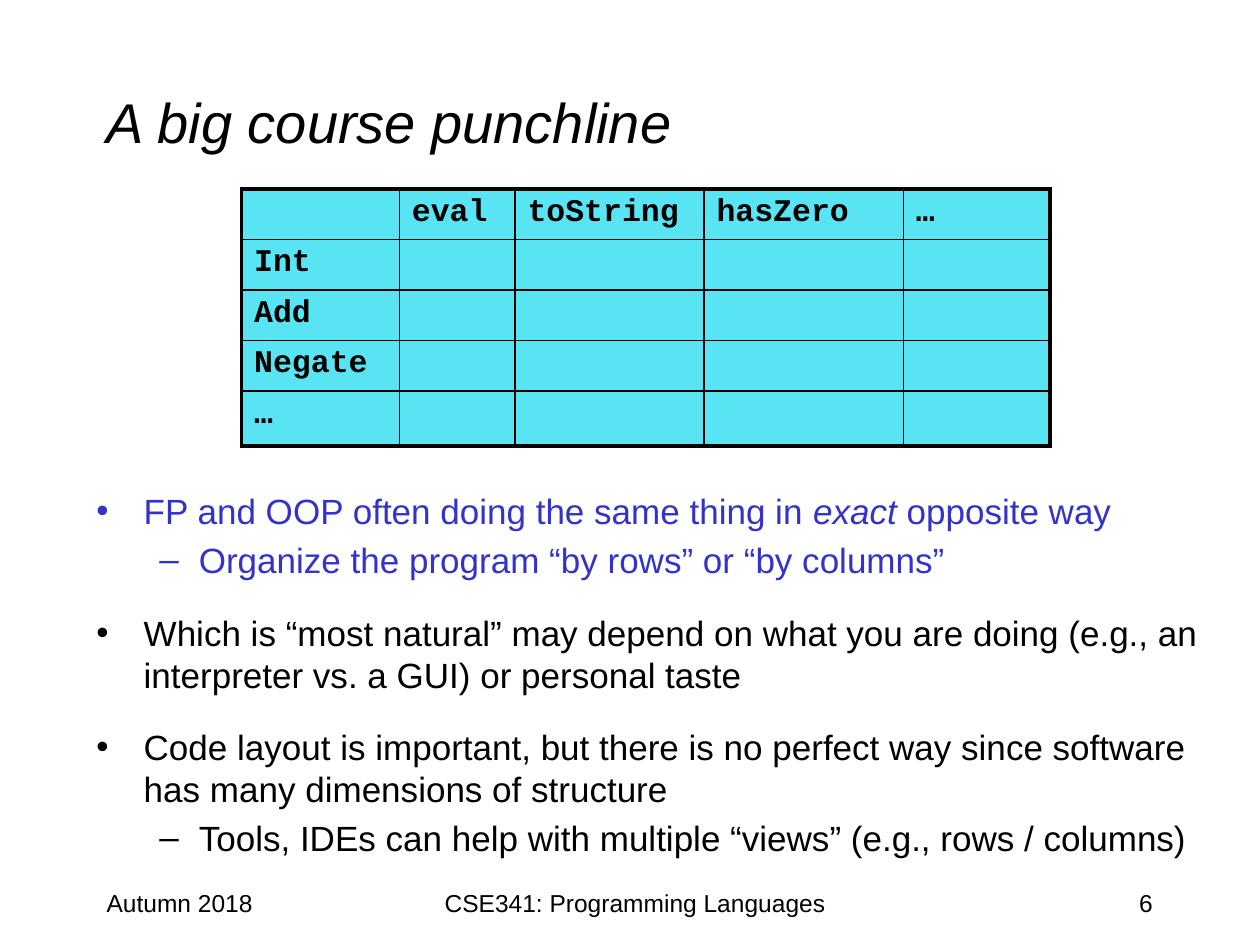
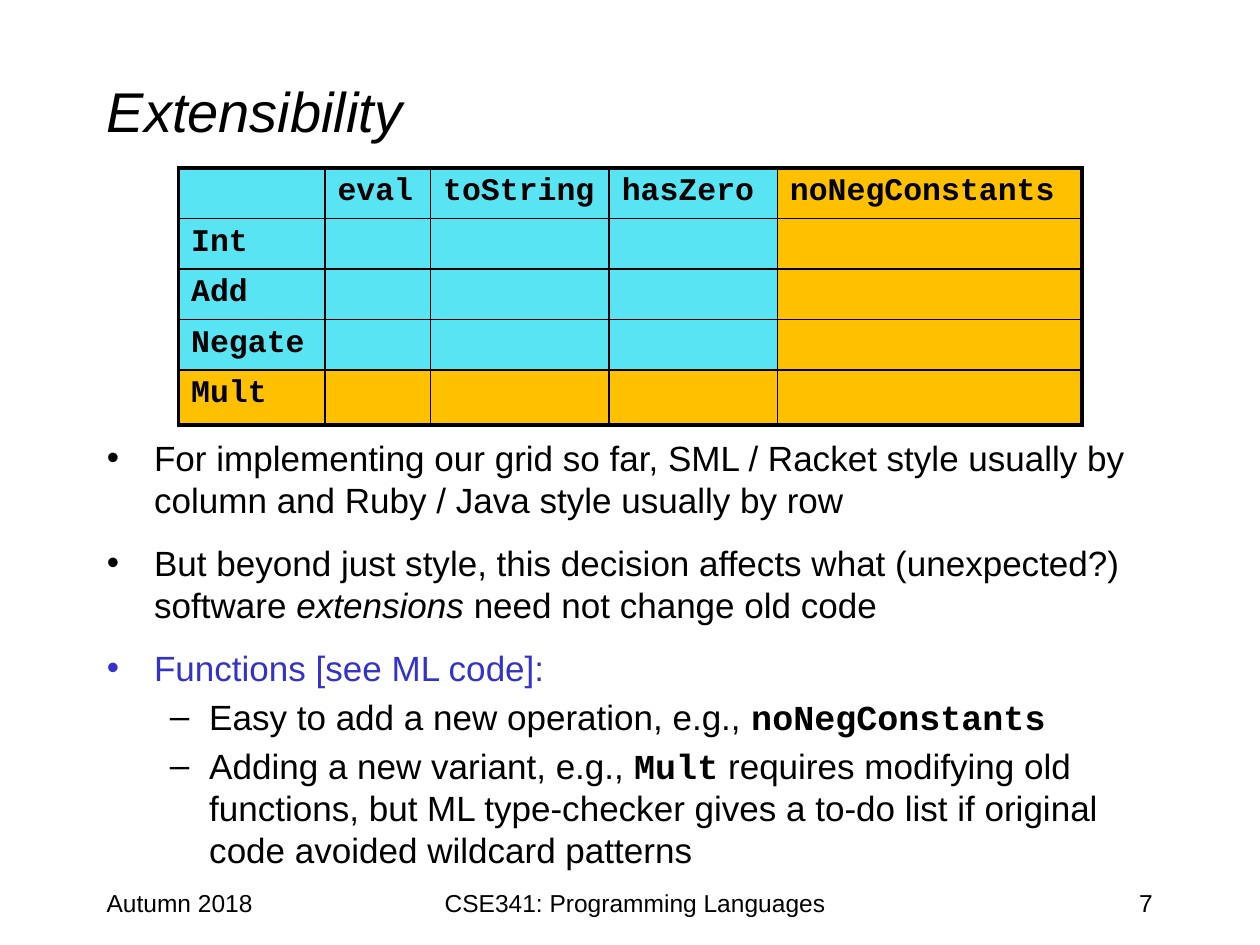
from lxml import etree
from pptx import Presentation
from pptx.dml.color import RGBColor
from pptx.enum.text import MSO_AUTO_SIZE as AutoSize, PP_ALIGN as Align
from pptx.oxml.ns import qn
from pptx.util import Cm, Pt

BLACK, BLUE = "000000", "3333CC"
CYAN, AMBER = "59E4F3", "FFC000"
SANS, MONO = "Arial", "Courier New"
CODE = {"font": MONO, "bold": True}
ITALIC = {"italic": True}
VARIANTS = ["Int", "Add", "Negate"]
OPERATIONS = ["eval", "toString", "hasZero"]


def colour(value):
    return RGBColor.from_string(value)


def write(para, text, size=20, font=SANS, color=BLACK, bold=False, italic=False):
    """Add one formatted run to a paragraph."""
    span = para.add_run()
    span.text = text
    style = span.font
    style.size, style.name = Pt(size), font
    style.bold, style.italic = bold, italic
    style.color.rgb = colour(color)


def place(shape, left, top, width, height):
    shape.left, shape.top = Cm(left), Cm(top)
    shape.width, shape.height = Cm(width), Cm(height)


def add_border(cell, side, width):
    line = etree.SubElement(cell._tc.get_or_add_tcPr(), qn(f"a:ln{side}"), w=str(Pt(width)))
    fill = etree.SubElement(line, qn("a:solidFill"))
    etree.SubElement(fill, qn("a:srgbClr"), val=BLACK)


class Lecture:
    """Holds the deck, its shared style and the current page."""

    footer_top, footer_height = 17.78, 1.27
    margin, content_width = 1.9, 21.59
    row_height, last_row_height = 0.97, 1.11
    thin, thick = 1, 2.25

    def __init__(self):
        self.deck = Presentation()
        self.deck.slide_width, self.deck.slide_height = Cm(25.4), Cm(19.05)
        self.page = None

    def new_page(self, title, title_top, number):
        self.page = self.deck.slides.add_slide(self.deck.slide_layouts[1])
        box = self.page.shapes.title
        place(box, self.margin, title_top, self.content_width, 3.18)
        box.text_frame.auto_size = AutoSize.NONE
        para = box.text_frame.paragraphs[0]
        para.alignment = Align.LEFT
        write(para, title, size=32, italic=True)
        self.footer("Autumn 2018", self.margin, 5.29, Align.LEFT)
        self.footer(str(number), 18.2, 5.29, Align.RIGHT)
        self.footer("CSE341: Programming Languages", 8.04, 9.53, Align.CENTER)

    def footer(self, text, left, width, align):
        box = self.page.shapes.add_textbox(
            Cm(left), Cm(self.footer_top), Cm(width), Cm(self.footer_height))
        box.text_frame.word_wrap = True
        para = box.text_frame.paragraphs[0]
        para.alignment = align
        write(para, text, size=14)

    def bullets(self, area, items, group_gap):
        """Fill the body; each item is a level and its (text, format) spans."""
        box = self.page.placeholders[1]
        place(box, *area)
        frame = box.text_frame
        frame.auto_size = AutoSize.NONE
        for index, (level, *spans) in enumerate(items):
            para = frame.add_paragraph() if index else frame.paragraphs[0]
            para.level = level
            para.line_spacing = Pt(24)
            para.space_before = Pt(group_gap if index and level == 0 else 4)
            for text, style in spans:
                write(para, text, **style)

    def grid(self, left, top, widths, operations, variants, last_fill):
        """Draw variants by operations; the last row and column take last_fill."""
        heads = ["", *operations]
        labels = ["", *variants]
        last_row, last_column = len(labels) - 1, len(heads) - 1
        heights = [self.row_height] * last_row + [self.last_row_height]
        table = self.page.shapes.add_table(
            len(labels), len(heads), Cm(left), Cm(top),
            Cm(sum(widths)), Cm(sum(heights))).table
        table.first_row = table.horz_banding = False
        for column, width in zip(table.columns, widths):
            column.width = Cm(width)
        for r, height in enumerate(heights):
            table.rows[r].height = Cm(height)
            for c in range(len(heads)):
                cell = table.cell(r, c)
                outer = {"L": c == 0, "R": c == last_column, "T": r == 0, "B": r == last_row}
                for side, is_outer in outer.items():
                    add_border(cell, side, self.thick if is_outer else self.thin)
                cell.fill.solid()
                is_last = r == last_row or c == last_column
                cell.fill.fore_color.rgb = colour(last_fill if is_last else CYAN)
                text = heads[c] if r == 0 else labels[r] if c == 0 else ""
                if text:
                    write(cell.text_frame.paragraphs[0], text, size=18, **CODE)


def punchline(lecture):
    blue = {"color": BLUE}
    lecture.new_page("A big course punchline", 0.85, 6)
    lecture.bullets((1.69, 9.74, 22.86, 7.83), [
        (0, ("FP and OOP often doing the same thing in ", blue),
            ("exact", blue | ITALIC), (" opposite way", blue)),
        (1, ("Organize the program “by rows” or “by columns”", blue)),
        (0, ("Which is “most natural” may depend on what you are doing "
             "(e.g., an interpreter vs. a GUI) or personal taste", {})),
        (0, ("Code layout is important, but there is no perfect way since "
             "software has many dimensions of structure", {})),
        (1, ("Tools, IDEs can help with multiple “views” (e.g., rows / columns)", {})),
    ], group_gap=17.5)
    lecture.grid(4.87, 3.81, [3.18, 2.33, 3.81, 4.02, 2.96],
                 OPERATIONS + ["…"], VARIANTS + ["…"], CYAN)


def extensibility(lecture):
    lecture.new_page("Extensibility", 0.64, 7)
    lecture.bullets((1.9, 8.68, 21.59, 9.31), [
        (0, ("For implementing our grid so far, SML / Racket style usually by "
             "column and Ruby / Java style usually by row", {})),
        (0, ("But beyond just style, this decision affects what (unexpected?) software ", {}),
            ("extensions", ITALIC), (" need not change old code", {})),
        (0, ("Functions [see ML code]:", {"color": BLUE})),
        (1, ("Easy to add a new operation, e.g., ", {}), ("noNegConstants", CODE)),
        (1, ("Adding a new variant, e.g., ", {}), ("Mult", CODE),
            (" requires modifying old functions, but ML type-checker gives a "
             "to-do list if original code avoided wildcard patterns", {})),
    ], group_gap=12)
    lecture.grid(3.6, 3.39, [2.95, 2.13, 3.6, 3.39, 6.14],
                 OPERATIONS + ["noNegConstants"], VARIANTS + ["Mult"], AMBER)


def main():
    lecture = Lecture()
    punchline(lecture)
    extensibility(lecture)
    lecture.deck.save("out.pptx")


if __name__ == "__main__":
    main()
